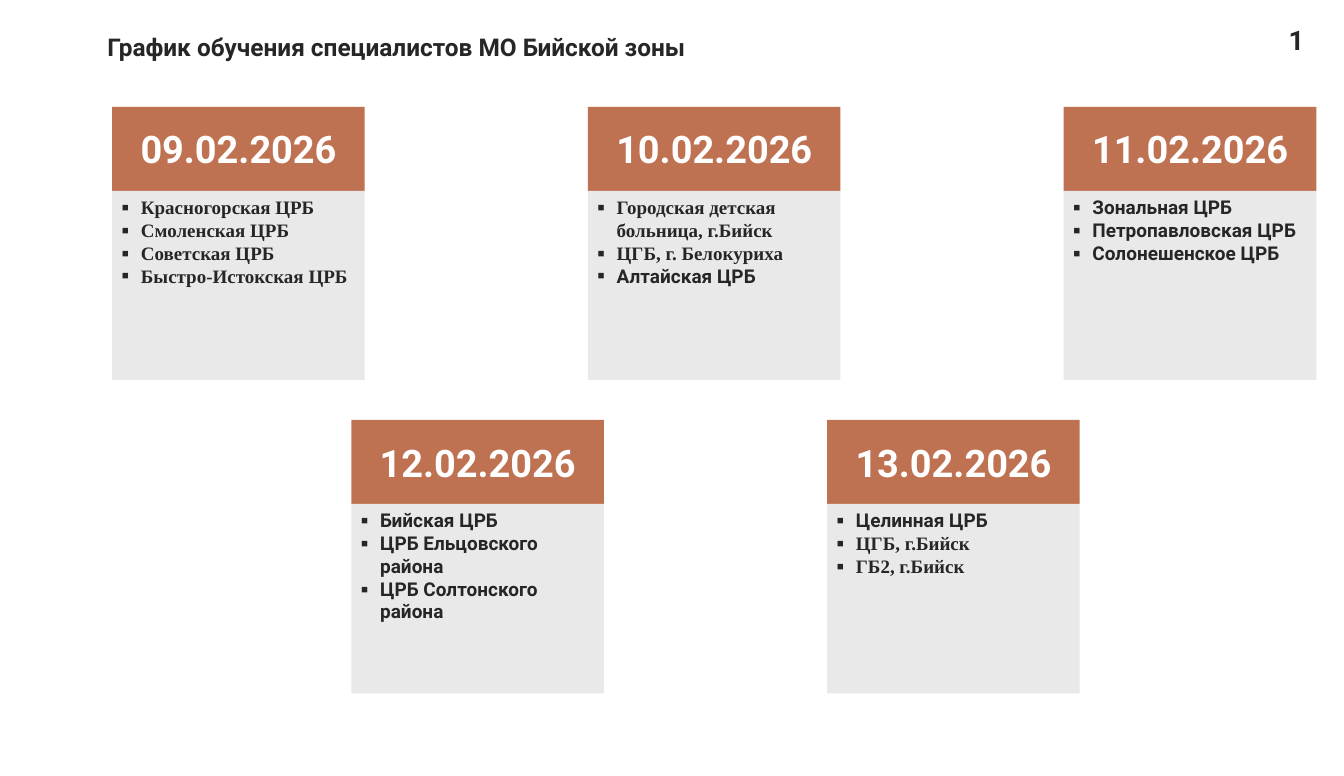
from dataclasses import dataclass

from lxml.etree import SubElement
from pptx import Presentation
from pptx.dml.color import RGBColor
from pptx.enum.shapes import MSO_SHAPE
from pptx.enum.text import MSO_ANCHOR, MSO_AUTO_SIZE, PP_ALIGN
from pptx.oxml.ns import qn
from pptx.util import Cm, Pt


@dataclass(frozen=True)
class Theme:
    accent: RGBColor = RGBColor(0xBF, 0x72, 0x52)
    panel: RGBColor = RGBColor(0xE9, 0xE9, 0xE9)
    dark: RGBColor = RGBColor(0x26, 0x26, 0x26)
    white: RGBColor = RGBColor(0xFF, 0xFF, 0xFF)
    sans: str = "Roboto"
    serif: str = "Times New Roman"
    title_size: Pt = Pt(18)
    number_size: Pt = Pt(20)
    date_size: Pt = Pt(28)
    list_size: Pt = Pt(14)
    list_spacing: Pt = Pt(16.8)


theme = Theme()


def add_text(paragraph, text, size, color, font_name=theme.sans):
    run = paragraph.add_run()
    run.text = text
    run.font.name = font_name
    run.font.size = size
    run.font.bold = True
    run.font.color.rgb = color


def add_panel(left, top, width, height, color):
    shape = slide.shapes.add_shape(MSO_SHAPE.RECTANGLE, left, top, width, height)
    shape.shadow.inherit = False
    shape.fill.solid()
    shape.fill.fore_color.rgb = color
    shape.line.fill.background()
    shape.text_frame.word_wrap = True
    return shape


presentation = Presentation()
presentation.slide_width = Cm(35)
presentation.slide_height = Cm(20.2)
slide = presentation.slides.add_slide(presentation.slide_layouts[5])

# Title
title = slide.shapes.title
title.left, title.top, title.width, title.height = Cm(2.54), Cm(0.41), Cm(30), Cm(1.7)
title.text_frame.auto_size = MSO_AUTO_SIZE.NONE
title.text_frame.vertical_anchor = MSO_ANCHOR.MIDDLE
paragraph = title.text_frame.paragraphs[0]
paragraph.alignment = PP_ALIGN.LEFT
paragraph.line_spacing = 0.9
add_text(paragraph, "График обучения специалистов МО Бийской зоны", theme.title_size, theme.dark)

# Slide number
number_box = slide.shapes.add_textbox(Cm(33.08), Cm(0.43), Cm(1.37), Cm(1.22))
number_box.text_frame.word_wrap = True
number_box.text_frame.vertical_anchor = MSO_ANCHOR.MIDDLE
paragraph = number_box.text_frame.paragraphs[0]
paragraph.alignment = PP_ALIGN.CENTER
add_text(paragraph, "1", theme.number_size, theme.dark)

# Training days by row: left and top of the row in cm, then dates with hospitals and fonts
schedule_rows = [
    (2.92, 2.78, [
        ("09.02.2026", [
            ("Красногорская ЦРБ", theme.serif),
            ("Смоленская ЦРБ", theme.serif),
            ("Советская ЦРБ", theme.serif),
            ("Быстро-Истокская ЦРБ", theme.serif),
        ]),
        ("10.02.2026", [
            ("Городская детская больница, г.Бийск", theme.serif),
            ("ЦГБ, г. Белокуриха", theme.serif),
            ("Алтайская ЦРБ", theme.sans),
        ]),
        ("11.02.2026", [
            ("Зональная ЦРБ", theme.sans),
            ("Петропавловская ЦРБ", theme.sans),
            ("Солонешенское ЦРБ", theme.sans),
        ]),
    ]),
    (9.15, 10.93, [
        ("12.02.2026", [
            ("Бийская ЦРБ", theme.sans),
            ("ЦРБ Ельцовского района", theme.sans),
            ("ЦРБ Солтонского района", theme.sans),
        ]),
        ("13.02.2026", [
            ("Целинная ЦРБ", theme.sans),
            ("ЦГБ, г.Бийск", theme.serif),
            ("ГБ2, г.Бийск", theme.serif),
        ]),
    ]),
]
card_width, date_height, list_height = Cm(6.58), Cm(2.19), Cm(4.93)
card_step = Cm(12.39)
list_indent = Cm(0.5)

for row_left, row_top, training_days in schedule_rows:
    for column, (date, hospitals) in enumerate(training_days):
        left = Cm(row_left) + card_step * column
        top = Cm(row_top)

        # Date header
        header = add_panel(left, top, card_width, date_height, theme.accent)
        header.text_frame.vertical_anchor = MSO_ANCHOR.MIDDLE
        paragraph = header.text_frame.paragraphs[0]
        paragraph.alignment = PP_ALIGN.CENTER
        add_text(paragraph, date, theme.date_size, theme.white)

        # Hospital list
        panel = add_panel(left, top + date_height, card_width, list_height, theme.panel)
        text_frame = panel.text_frame
        text_frame.vertical_anchor = MSO_ANCHOR.TOP
        for index, (hospital, font_name) in enumerate(hospitals):
            paragraph = text_frame.add_paragraph() if index else text_frame.paragraphs[0]
            paragraph.alignment = PP_ALIGN.LEFT
            paragraph.line_spacing = theme.list_spacing
            properties = paragraph._p.get_or_add_pPr()
            properties.set("marL", str(list_indent))
            properties.set("indent", str(-list_indent))
            SubElement(properties, qn("a:buFont"), typeface=theme.sans)
            SubElement(properties, qn("a:buChar"), char="▪")
            add_text(paragraph, hospital, theme.list_size, theme.dark, font_name)

presentation.save("out.pptx")
